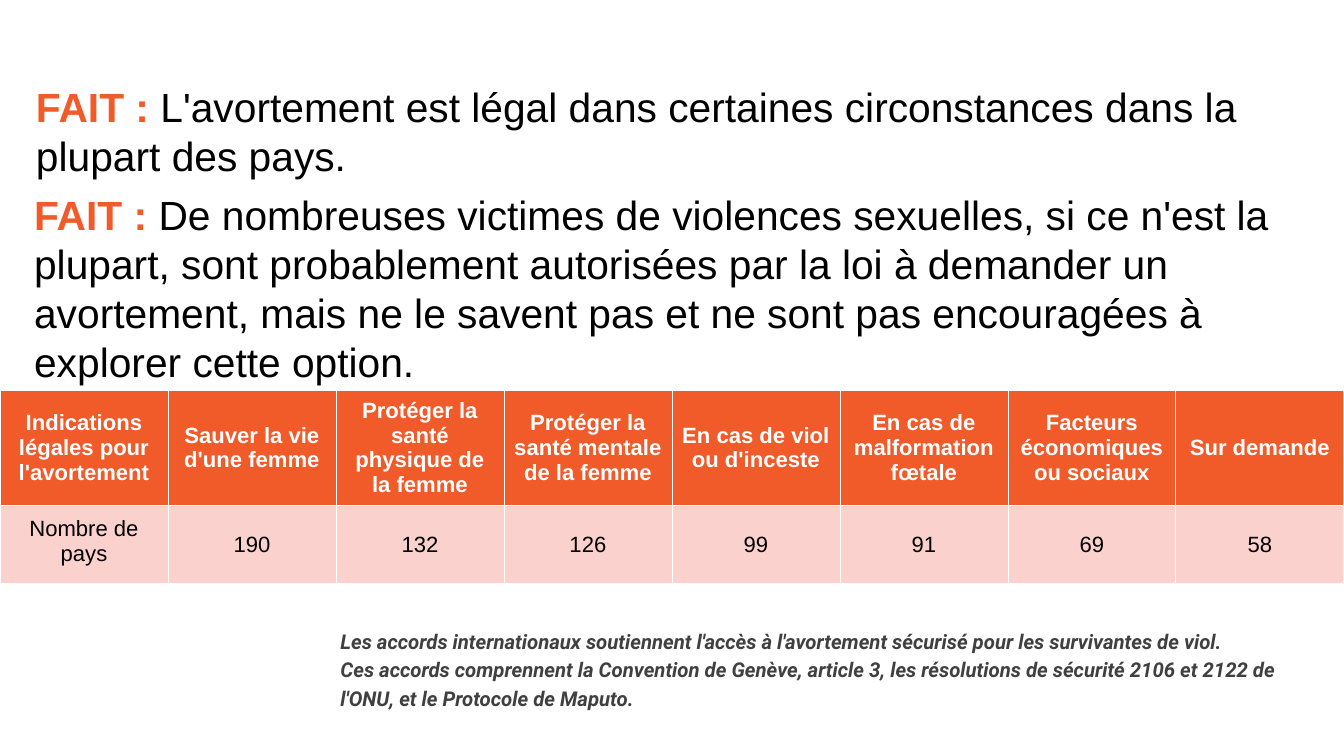
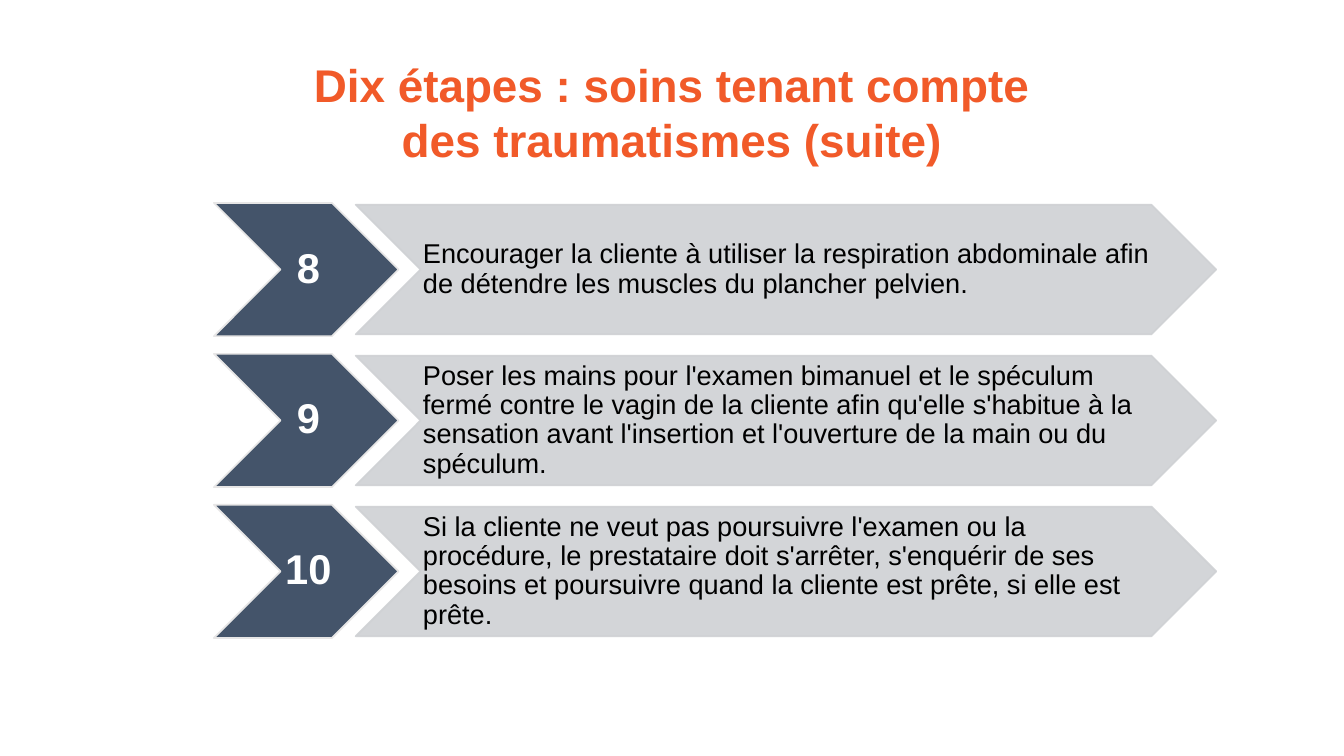
from pptx import Presentation
from pptx.dml.color import RGBColor
from pptx.enum.shapes import MSO_SHAPE
from pptx.enum.text import MSO_ANCHOR, PP_ALIGN
from pptx.oxml import parse_xml
from pptx.oxml.ns import nsdecls, qn
from pptx.util import Inches, Pt
from lxml.etree import SubElement

ORANGE = RGBColor(0xF1, 0x5A, 0x29)
PINK = RGBColor(0xFA, 0xD1, 0xCD)
NAVY = RGBColor(0x44, 0x54, 0x6A)
PALE_GREY = RGBColor(0xE7, 0xE6, 0xE6)
GREY = RGBColor(0xCF, 0xD1, 0xD4)
DARK_GREY = RGBColor(0x41, 0x40, 0x41)
BLACK = RGBColor(0, 0, 0)
WHITE = RGBColor(0xFF, 0xFF, 0xFF)

INDICATIONS = [
    ("Indications légales pour l'avortement", "Nombre de pays"),
    ("Sauver la vie d'une femme", "190"),
    ("Protéger la santé physique de la femme", "132"),
    ("Protéger la santé mentale de la femme", "126"),
    ("En cas de viol ou d'inceste", "99"),
    ("En cas de malformation fœtale", "91"),
    ("Facteurs économiques ou sociaux", "69"),
    ("Sur demande", "58"),
]
STEPS = [
    ("8", "Encourager la cliente à utiliser la respiration abdominale afin de "
          "détendre les muscles du plancher pelvien."),
    ("9", "Poser les mains pour l'examen bimanuel et le spéculum fermé contre le "
          "vagin de la cliente afin qu'elle s'habitue à la sensation avant "
          "l'insertion et l'ouverture de la main ou du spéculum."),
    ("10", "Si la cliente ne veut pas poursuivre l'examen ou la procédure, le "
           "prestataire doit s'arrêter, s'enquérir de ses besoins et poursuivre "
           "quand la cliente est prête, si elle est prête."),
]


def set_font(font, size, color, bold=False, italic=False, name="Arial"):
    """Set the face, size, colour and weight of a font."""
    font.name, font.size, font.bold, font.italic = name, Pt(size), bold, italic
    font.color.rgb = color


def set_margins(target, left, top, right, bottom):
    """Set the inner margins of a text frame or cell, in inches."""
    target.margin_left, target.margin_top = Inches(left), Inches(top)
    target.margin_right, target.margin_bottom = Inches(right), Inches(bottom)


def add_text(slide, box, margins):
    """Add a wrapping text box and return its first paragraph."""
    frame = slide.shapes.add_textbox(*map(Inches, box)).text_frame
    frame.word_wrap = True
    set_margins(frame, *margins)
    return frame.paragraphs[0]


def add_fact(slide, box, margins, text):
    """Add a statement led by the orange word for a fact."""
    paragraph = add_text(slide, box, margins)
    for words, color, bold in (("FAIT : ", ORANGE, True), (text, BLACK, False)):
        run = paragraph.add_run()
        run.text = words
        set_font(run.font, 48, color, bold)


def set_borders(cell):
    """Draw thin white lines around a table cell."""
    properties = cell._tc.get_or_add_tcPr()
    for index, side in enumerate(("lnL", "lnR", "lnT", "lnB")):
        properties.insert(index, parse_xml(
            f'<a:{side} {nsdecls("a")} w="{Pt(1)}"><a:solidFill>'
            f'<a:srgbClr val="{WHITE}"/></a:solidFill></a:{side}>'))


def add_indications_table(slide, box, row_heights):
    """Add the table of legal indications and country counts."""
    table = slide.shapes.add_table(
        len(row_heights), len(INDICATIONS), *map(Inches, box)).table
    table.horz_banding = False
    for row, height in zip(table.rows, row_heights):
        row.height = Inches(height)
    for column, texts in enumerate(INDICATIONS):
        for row, text in enumerate(texts):
            cell = table.cell(row, column)
            header = row == 0
            cell.fill.solid()
            cell.fill.fore_color.rgb = ORANGE if header else PINK
            cell.vertical_anchor = MSO_ANCHOR.MIDDLE
            set_margins(cell, 0.15, 0.07, 0.15, 0.07)
            set_borders(cell)
            paragraph = cell.text_frame.paragraphs[0]
            paragraph.text = text
            paragraph.alignment = PP_ALIGN.CENTER
            set_font(paragraph.font, 26, WHITE if header else BLACK, header)
    table.cell(1, 0).margin_bottom = Inches(0.17)


def add_chevron(slide, box, text, fill, line, margins):
    """Add a chevron with text and return its shape and paragraph."""
    shape = slide.shapes.add_shape(MSO_SHAPE.CHEVRON, *map(Inches, box))
    shape.shadow.inherit = False
    shape.fill.solid()
    shape.fill.fore_color.rgb = fill
    shape.line.color.rgb = line
    shape.line.width = Pt(2)
    frame = shape.text_frame
    frame.word_wrap = True
    frame.vertical_anchor = MSO_ANCHOR.MIDDLE
    set_margins(frame, *margins)
    paragraph = frame.paragraphs[0]
    paragraph.text = text
    paragraph.line_spacing = 0.9
    return shape, paragraph


def add_step(slide, left, top, number, text):
    """Add a numbered chevron and the chevron that explains it."""
    _, paragraph = add_chevron(slide, (left, top, 3.02, 2.18), number, NAVY,
                               PALE_GREY, (0.07, 0.03, 0, 0.03))
    paragraph.alignment = PP_ALIGN.CENTER
    set_font(paragraph.font, 49, WHITE, True)
    shape, paragraph = add_chevron(
        slide, (left + 2.32, top + 0.03, 14.08, 2.12), text, GREY, GREY,
        (0.04, 0.02, 0, 0.02))
    paragraph.alignment = PP_ALIGN.LEFT
    set_font(paragraph.font, 32, BLACK)
    for color in shape._element.spPr.iter(qn("a:srgbClr")):
        SubElement(color, qn("a:alpha")).set("val", "90000")


def build_facts_slide(slide):
    """Build the slide on the legality of abortion."""
    add_fact(slide, (0.49, 1.24, 21.35, 1.46), (0.1, 0.1, 0.1, 0.1),
             "L'avortement est légal dans certaines circonstances dans la "
             "plupart des pays.")
    add_fact(slide, (0.46, 3.06, 21.03, 3.33), (0.1, 0.05, 0.1, 0.05),
             "De nombreuses victimes de violences sexuelles, si ce n'est la "
             "plupart, sont probablement autorisées par la loi à demander un "
             "avortement, mais ne le savent pas et ne sont pas encouragées à "
             "explorer cette option.")
    add_indications_table(slide, (0, 6.39, 21.99, 3.16), (1.88, 1.28))
    paragraph = add_text(slide, (5.57, 10.24, 16.1, 1.52), (0, 0, 0, 0))
    paragraph.text = (
        "Les accords internationaux soutiennent l'accès à l'avortement sécurisé "
        "pour les survivantes de viol.\vCes accords comprennent la Convention de "
        "Genève, article 3, les résolutions de sécurité 2106 et 2122 de l'ONU, "
        "et le Protocole de Maputo.")
    paragraph.line_spacing = 1.15
    set_font(paragraph.font, 24, DARK_GREY, True, True, "Roboto")


def build_steps_slide(slide):
    """Build the slide with the last three steps of care."""
    title = add_text(slide, (4.47, 0.83, 13.04, 1.21), (0.1, 0.1, 0.1, 0.1))
    title.text = "Dix étapes : soins tenant compte des traumatismes (suite)"
    title.alignment = PP_ALIGN.CENTER
    set_font(title.font, 54, ORANGE, True)
    for index, (number, text) in enumerate(STEPS):
        add_step(slide, 3.5, 3.32 + 2.47 * index, number, text)


def main():
    """Build and save the presentation."""
    presentation = Presentation()
    presentation.slide_width = Inches(21.99)
    presentation.slide_height = Inches(12.37)
    for build in (build_facts_slide, build_steps_slide):
        build(presentation.slides.add_slide(presentation.slide_layouts[6]))
    presentation.save("out.pptx")


if __name__ == "__main__":
    main()
